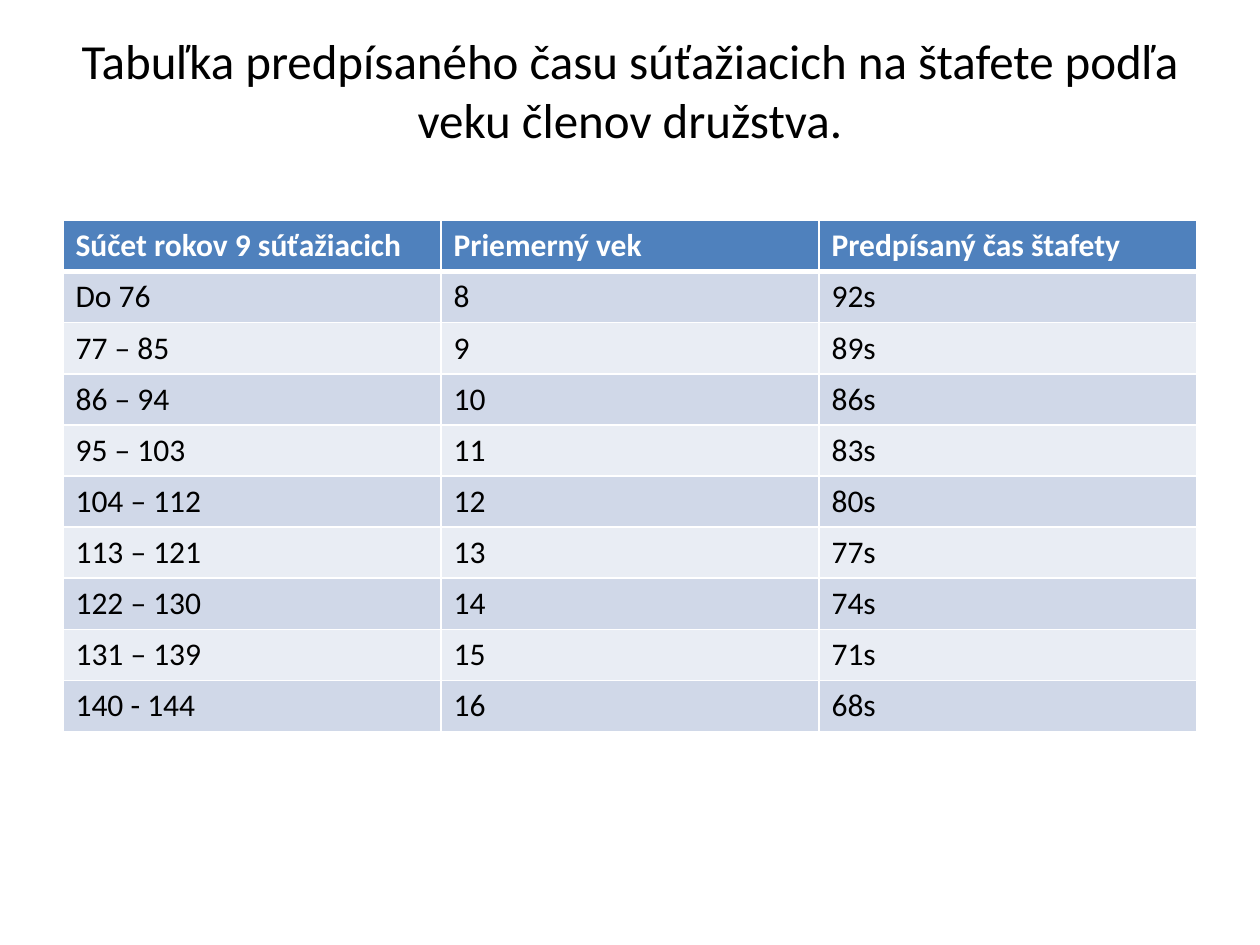
from lxml import etree
from pptx import Presentation
from pptx.dml.color import RGBColor
from pptx.enum import text
from pptx.oxml import ns
from pptx.util import Pt


def color(value):
    return RGBColor.from_string(value)


class Deck:
    font = "Calibri"
    black, white, header = "000000", "FFFFFF", "4F81BD"
    bands = ("D0D8E8", "E9EDF4")

    def __init__(self, prs):
        self.s = prs.slides.add_slide(prs.slide_layouts[6])

    def label(self, tf, content, size, ink, bold=False, align=text.PP_ALIGN.LEFT):
        p = tf.paragraphs[0]
        p.alignment = align
        r = p.add_run()
        r.text = content
        values = {"name": self.font, "size": Pt(size), "bold": bold}
        for key, value in values.items():
            setattr(r.font, key, value)
        r.font.color.rgb = color(ink)

    def title(self, content, x, y, w, h):
        tf = self.s.shapes.add_textbox(Pt(x), Pt(y), Pt(w), Pt(h)).text_frame
        values = {"word_wrap": True, "vertical_anchor": text.MSO_ANCHOR.MIDDLE}
        for key, value in values.items():
            setattr(tf, key, value)
        self.label(tf, content, 28, self.black, align=text.PP_ALIGN.CENTER)

    def borders(self, cell, widths):
        tcPr = cell._tc.get_or_add_tcPr()
        for side, width in widths.items():
            ln = etree.SubElement(tcPr, ns.qn(f"a:ln{side}"), w=str(Pt(width)))
            fill = etree.SubElement(ln, ns.qn("a:solidFill"))
            etree.SubElement(fill, ns.qn("a:srgbClr"), val=self.white)

    def table(self, rows, x, y, w, h):
        table = self.s.shapes.add_table(
            len(rows), len(rows[0]), Pt(x), Pt(y), Pt(w), Pt(h)).table
        for i, row in enumerate(rows):
            head = i == 0
            fill = self.header if head else self.bands[(i - 1) % 2]
            # The rule under the header row is heavier than the others
            widths = {"L": 1, "R": 1, "T": 3 if i == 1 else 1, "B": 3 if head else 1}
            for j, content in enumerate(row):
                cell = table.cell(i, j)
                self.borders(cell, widths)
                cell.fill.solid()
                cell.fill.fore_color.rgb = color(fill)
                self.label(cell.text_frame, content, 18,
                           self.white if head else self.black, bold=head)


def main():
    prs = Presentation()
    prs.slide_width, prs.slide_height = Pt(720), Pt(540)
    deck = Deck(prs)

    # Title
    deck.title("Tabuľka predpísaného času súťažiacich na štafete podľa "
               "veku členov družstva.", 36, 24, 648, 54)

    # Each year of average age takes three seconds off the time
    sums = ["Do 76", "77 – 85", "86 – 94", "95 – 103", "104 – 112",
            "113 – 121", "122 – 130", "131 – 139", "140 - 144"]
    rows = [("Súčet rokov 9 súťažiacich", "Priemerný vek", "Predpísaný čas štafety")]
    rows += [(years, str(8 + i), f"{92 - 3 * i}s") for i, years in enumerate(sums)]
    deck.table(rows, 36, 126, 648, 292)

    prs.save("out.pptx")


if __name__ == "__main__":
    main()
